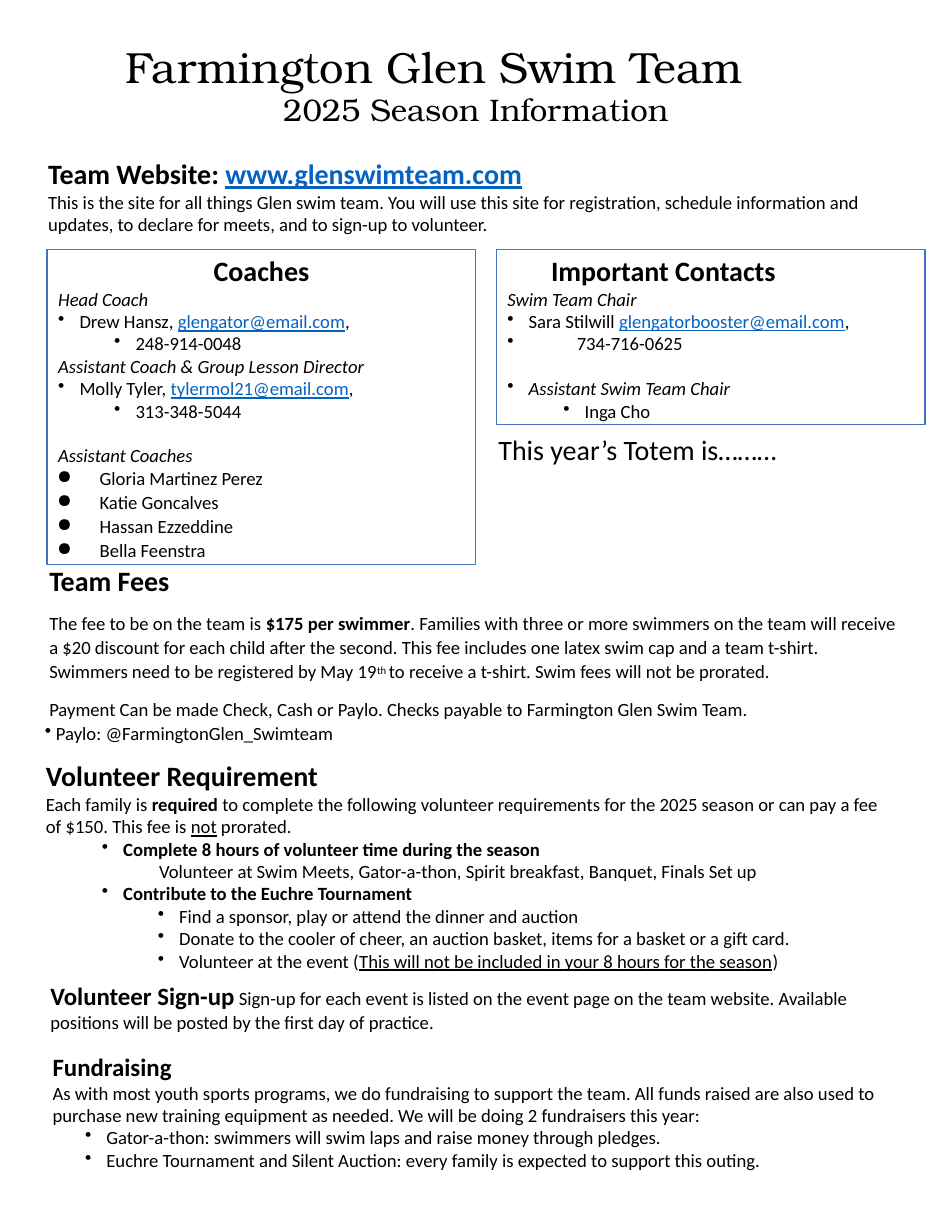
from lxml import etree
from pptx import Presentation, util as u
from pptx.dml.color import RGBColor
from pptx.enum import shapes, text
from pptx.oxml.ns import qn

THEME = {
    "serif": "TeX Gyre Bonum", "sans": "Calibri",
    "ink": RGBColor.from_string("000000"),
    "link": RGBColor.from_string("0562C1"),
    "border": RGBColor.from_string("4471C4"),
    "title": 28, "subtitle": 20, "head": 18, "subhead": 16, "body": 12,
}

# Paragraph kinds: size, face, style letters, left margin, first-line indent, bullet
KINDS = {
    "title": ("title", "serif", "", 0.01, 0, None),
    "subtitle": ("subtitle", "serif", "c", 0, 0, None),
    "head": ("head", "sans", "b", 0.01, 0, None),
    "center": ("head", "sans", "bc", 0, 0, None),
    "large": ("head", "sans", "", 0.01, 0, None),
    "subhead": ("subhead", "sans", "b", 0.01, 0, None),
    "body": ("body", "sans", "", 0.01, 0, None),
    "role": ("body", "sans", "i", 0.1, 0, None),
    "item": ("body", "sans", "", 0.29, -0.19, "•"),
    "subitem": ("body", "sans", "", 0.79, -0.19, "•"),
    "phone": ("body", "sans", "", 0.72, -0.62, "•"),
    "name": ("body", "sans", "", 0.47, -0.38, "●"),
    "duty": ("body", "sans", "b", 0.7, -0.19, "•"),
    "task": ("body", "sans", "", 1.2, -0.19, "•"),
}

# Paragraph: kind, runs, then optional space before, line spacing, margin.
# A run is a string or (string, letters): b bold, u underline, l link, s superscript,
# n body size and not bold
TITLE = [("title", ["Farmington Glen Swim Team"], {"before": 0.9})]
INTRO = [
    ("subtitle", ["2025 Season Information"], {"before": 1}),
    ("head", ["Team Website: ", ("www.glenswimteam.com", "l")], {"before": 18.5}),
    ("body", ["This is the site for all things Glen swim team. You will use this site for "
              "registration, schedule information and updates, to declare for meets, "
              "and to sign-up to volunteer."], {"before": 0.2}),
]
COACHES = [
    ("center", ["Coaches"], {"before": 2.4}),
    ("role", ["Head Coach"], {"before": 0.5}),
    ("item", ["Drew Hansz, ", ("glengator@email.com", "l"), ","], {}),
    ("subitem", ["248-914-0048"], {}),
    ("role", ["Assistant Coach & Group Lesson Director"], {}),
    ("item", ["Molly Tyler, ", ("tylermol21@email.com", "l"), ","], {}),
    ("subitem", ["313-348-5044"], {}),
    ("role", ["Assistant Coaches"], {"before": 14.4}),
    ("name", ["Gloria Martinez Perez"], {"before": 0.2}),
    ("name", ["Katie Goncalves"], {"before": 1.1}),
    ("name", ["Hassan Ezzeddine"], {"before": 1.1}),
    ("name", ["Bella Feenstra"], {"before": 0.9}),
]
CONTACTS = [
    ("head", ["Important Contacts"], {"before": 2.4, "margin": 0.49}),
    ("role", ["Swim Team Chair"], {"before": 0.5}),
    ("item", ["Sara Stilwill ", ("glengatorbooster@email.com", "l"), ","], {}),
    ("phone", ["734-716-0625"], {}),
    ("item", [("Assistant Swim Team Chair", "i")], {"before": 14.4}),
    ("subitem", ["Inga Cho"], {}),
]
FEES = [
    ("head", ["Team Fees"], {"before": 1, "margin": 0.04}),
    ("body", ["The fee to be on the team is ", ("$175 per swimmer", "b"),
              ". Families with three or more swimmers on the team will receive a $20 discount "
              "for each child after the second. This fee includes one latex swim cap and a team "
              "t-shirt. Swimmers need to be registered by May 19", ("th ", "s"),
              "to receive a t-shirt. Swim fees will not be prorated."],
     {"before": 8.8, "spacing": 1.07, "margin": 0.04}),
    ("body", ["Payment Can be made Check, Cash or Paylo. Checks payable to "
              "Farmington Glen Swim Team."],
     {"before": 8.8, "spacing": 1.07, "margin": 0.04}),
    ("item", ["Paylo: @FarmingtonGlen_Swimteam"], {"spacing": 1.07, "margin": 0.1}),
]
VOLUNTEER = [
    ("head", ["Volunteer Requirement"], {"before": 1}),
    ("body", ["Each family is ", ("required ", "b"),
              "to complete the following volunteer requirements for the 2025 season or can "
              "pay a fee of $150. This fee is ", ("not", "u"), " prorated."], {"before": 0.5}),
    ("duty", ["Complete 8 hours of volunteer time during the season"], {}),
    ("body", ["Volunteer at Swim Meets, Gator-a-thon, Spirit breakfast, Banquet, "
              "Finals Set up"], {"margin": 1.02}),
    ("duty", ["Contribute to the Euchre Tournament"], {}),
    ("task", ["Find a sponsor, play or attend the dinner and auction"], {}),
    ("task", ["Donate to the cooler of cheer, an auction basket, items for a basket "
              "or a gift card."], {}),
    ("task", ["Volunteer at the event (",
              ("This will not be included in your 8 hours for the season", "u"), ")"], {}),
]
TOTEM = [("large", ["This year’s Totem is………"], {"before": 1})]
SIGN_UP = [
    ("subhead", ["Volunteer Sign-up",
                 (" Sign-up for each event is listed on the event page on the team website. "
                  "Available positions will be posted by the first day of practice.", "n")],
     {"before": 0.9}),
]
FUNDRAISING = [
    ("subhead", ["Fundraising"], {"before": 0.9, "margin": 0.03}),
    ("body", ["As with most youth sports programs, we do fundraising to support the team. "
              "All funds raised are also used to purchase new training equipment as needed. "
              "We will be doing 2 fundraisers this year:"], {"margin": 0.03}),
    ("item", ["Gator-a-thon: swimmers will swim laps and raise money through pledges."],
     {"margin": 0.51}),
    ("item", ["Euchre Tournament and Silent Auction: every family is expected to support "
              "this outing."], {"margin": 0.51}),
]

# Blocks: content, (left, top, width, height), bordered
BLOCKS = [
    (TITLE, (1.11, 0.35, 6.55, 0.48), False),
    (INTRO, (0.42, 0.8, 7.66, 1.32), False),
    (COACHES, (0.42, 2.23, 3.83, 2.81), True),
    (CONTACTS, (4.43, 2.23, 3.83, 1.56), True),
    (FEES, (0.4, 5.02, 7.66, 1.98), False),
    (VOLUNTEER, (0.4, 6.76, 7.54, 2.34), False),
    (TOTEM, (4.44, 3.85, 2.52, 0.33), False),
    (SIGN_UP, (0.44, 8.75, 7.66, 0.48), False),
    (FUNDRAISING, (0.44, 9.38, 7.87, 1.09), False),
]


def add_run(p, run):
    words, style = (run, "") if isinstance(run, str) else run
    r = p.add_run()
    r.text = words
    if "b" in style:
        r.font.bold = True
    if "i" in style:
        r.font.italic = True
    if "u" in style or "l" in style:
        r.font.underline = True
    if "l" in style:
        r.font.color.rgb = THEME["link"]
    if "n" in style:
        r.font.size, r.font.bold = u.Pt(THEME["body"]), False
    if "s" in style:
        r._r.get_or_add_rPr().set("baseline", "24000")


def fill_paragraph(p, kind, runs, opts):
    size, face, style, margin, indent, bullet = KINDS[kind]
    p.font.size, p.font.name = u.Pt(THEME[size]), THEME[face]
    p.font.color.rgb = THEME["ink"]
    p.font.bold, p.font.italic = "b" in style, "i" in style
    p.alignment = text.PP_ALIGN.CENTER if "c" in style else text.PP_ALIGN.LEFT
    p.space_before = u.Pt(opts.get("before", 0))
    p.line_spacing = opts.get("spacing", 1.0)
    pPr = p._p.get_or_add_pPr()
    pPr.set("marL", str(u.Inches(opts.get("margin", margin))))
    pPr.set("indent", str(u.Inches(indent)))
    if bullet:
        bu = etree.Element(qn("a:buChar"), char=bullet)
        pPr.find(qn("a:defRPr")).addprevious(bu)
    for run in runs:
        add_run(p, run)


def add_block(s, content, box, bordered):
    at = [u.Inches(v) for v in box]
    if bordered:
        sp = s.shapes.add_shape(shapes.MSO_SHAPE.RECTANGLE, *at)
        sp.shadow.inherit = False
        sp.fill.background()
        sp.line.color.rgb, sp.line.width = THEME["border"], u.Pt(0.75)
    else:
        sp = s.shapes.add_textbox(*at)
    tf = sp.text_frame
    tf.word_wrap = True
    tf.auto_size = text.MSO_AUTO_SIZE.SHAPE_TO_FIT_TEXT
    tf.vertical_anchor = text.MSO_ANCHOR.TOP
    tf.margin_left = tf.margin_right = tf.margin_bottom = 0
    tf.margin_top = u.Inches(0.03 if bordered else 0.01)
    for i, paragraph in enumerate(content):
        fill_paragraph(tf.add_paragraph() if i else tf.paragraphs[0], *paragraph)


prs = Presentation()
prs.slide_width, prs.slide_height = u.Inches(8.5), u.Inches(11)
s = prs.slides.add_slide(prs.slide_layouts[6])
for block in BLOCKS:
    add_block(s, *block)
prs.save("out.pptx")
